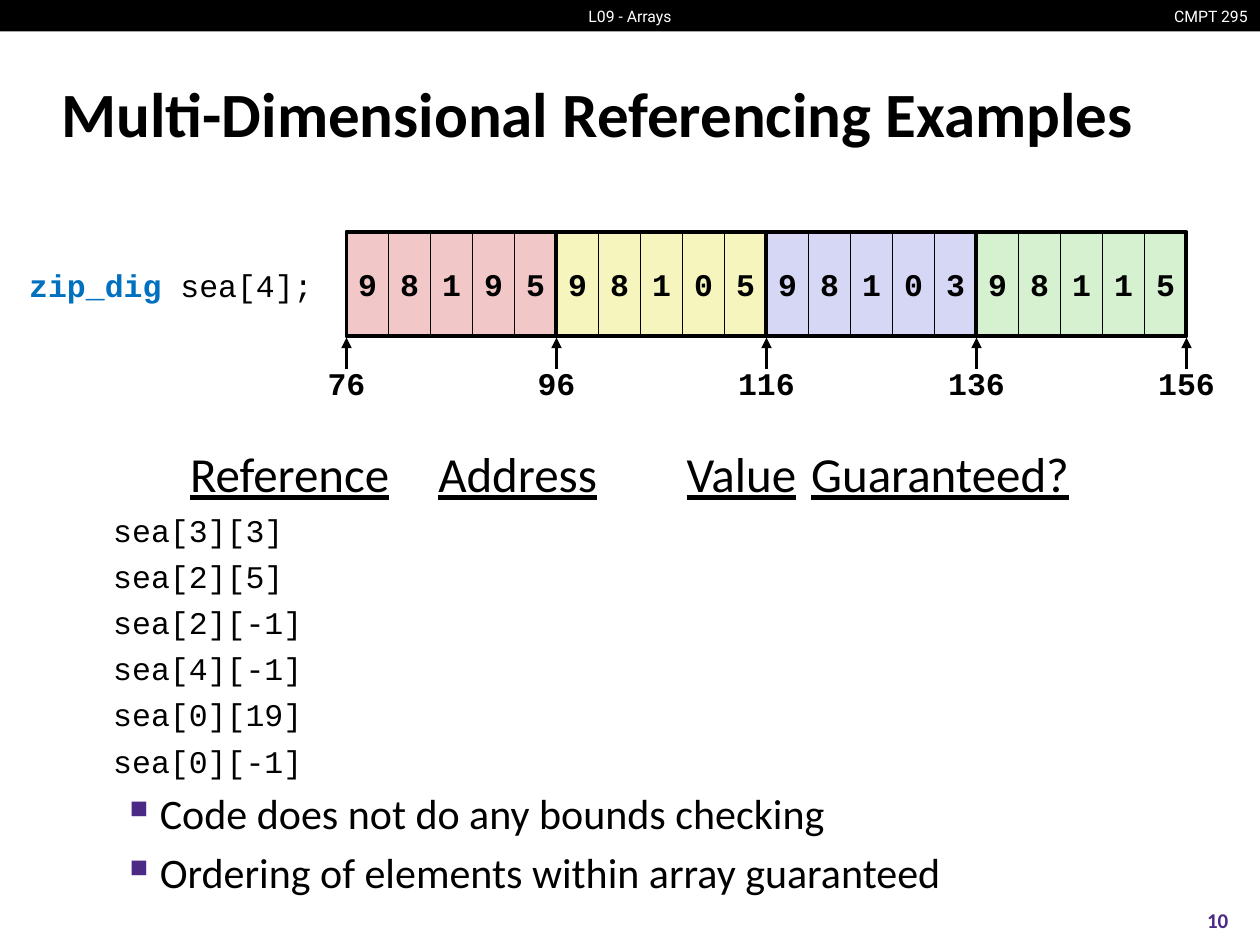
from lxml import etree
from pptx import Presentation
from pptx.dml.color import RGBColor
from pptx.enum.shapes import MSO_CONNECTOR, MSO_SHAPE
from pptx.enum.text import MSO_ANCHOR as Anchor, PP_ALIGN as Align
from pptx.oxml.ns import qn
from pptx.util import Inches, Pt

BLACK = RGBColor(0x00, 0x00, 0x00)
WHITE = RGBColor(0xFF, 0xFF, 0xFF)
PURPLE = RGBColor(0x4B, 0x2A, 0x85)
BLUE = RGBColor(0x00, 0x70, 0xC0)
PINK = RGBColor(0xF1, 0xC7, 0xC7)
YELLOW = RGBColor(0xF6, 0xF5, 0xBD)
LAVENDER = RGBColor(0xD6, 0xD6, 0xF5)
GREEN = RGBColor(0xD5, 0xF1, 0xCF)
CODE = "Courier New"


def write_text(paragraph, text, size=18, font=CODE, color=BLACK,
               bold=False, underline=False, align=Align.LEFT):
    paragraph.alignment = align
    run = paragraph.add_run()
    run.text = text
    run.font.size = Pt(size)
    run.font.name = font
    run.font.color.rgb = color
    run.font.bold = bold
    run.font.underline = underline


def add_box(shapes, left, top, width, height, fill=None, line=None,
            anchor=Anchor.MIDDLE, inset=0.1):
    """Add a rectangle, plain unless fill or line is given; return its first paragraph."""
    box = shapes.add_shape(MSO_SHAPE.RECTANGLE, Inches(left), Inches(top),
                           Inches(width), Inches(height))
    box.shadow.inherit = False
    if fill is None:
        box.fill.background()
    else:
        box.fill.solid()
        box.fill.fore_color.rgb = fill
    if line is None:
        box.line.fill.background()
    else:
        box.line.color.rgb = BLACK
        box.line.width = Pt(line)
    frame = box.text_frame
    frame.word_wrap = True
    frame.vertical_anchor = anchor
    frame.margin_left = frame.margin_right = Inches(inset)
    frame.margin_top = frame.margin_bottom = Inches(0.05)
    return frame.paragraphs[0]


presentation = Presentation()
presentation.slide_width = Inches(10)
presentation.slide_height = Inches(7.5)
slide = presentation.slides.add_slide(presentation.slide_layouts[6])
shapes = slide.shapes

# Header band, title and slide number
add_box(shapes, 0, 0, 10, 0.25, fill=BLACK)
write_text(add_box(shapes, 9, 0, 1, 0.25), "CMPT 295",
           size=9, font="Roboto", color=WHITE, align=Align.RIGHT)
write_text(add_box(shapes, 4.4, 0, 1.2, 0.25), "L09 - Arrays",
           size=9, font="Roboto", color=WHITE, align=Align.CENTER)
write_text(add_box(shapes, 0.39, 0.48, 9.19, 0.83),
           "Multi-Dimensional Referencing Examples",
           size=36, font="Calibri", bold=True)
write_text(add_box(shapes, 9.33, 7.1, 0.67, 0.4), "10",
           size=12, font="Calibri", color=PURPLE, bold=True, align=Align.CENTER)

# References and remarks
paragraph = add_box(shapes, 0.43, 3.47, 9.15, 3.6, anchor=Anchor.TOP)
body = paragraph._parent
for heading in ("Reference", "Address", "Value", "Guaranteed?"):
    write_text(paragraph, "\t", size=28, font="Calibri")
    write_text(paragraph, heading, size=28, font="Calibri", underline=True)
tabs = etree.SubElement(paragraph._p.get_or_add_pPr(), qn("a:tabLst"))
for position in (0.98, 2.95, 4.92, 5.91):
    etree.SubElement(tabs, qn("a:tab"), pos=str(Inches(position)), algn="l")

for index in ("[3][3]", "[2][5]", "[2][-1]", "[4][-1]", "[0][19]", "[0][-1]"):
    paragraph = body.add_paragraph()
    paragraph.space_before = Pt(4.8)
    paragraph._p.get_or_add_pPr().set("marL", str(Inches(0.37)))
    write_text(paragraph, "sea" + index)

for remark in ("Code does not do any bounds checking",
               "Ordering of elements within array guaranteed"):
    paragraph = body.add_paragraph()
    paragraph.space_before = Pt(4.8)
    write_text(paragraph, remark, size=24, font="Calibri")
    properties = paragraph._p.get_or_add_pPr()
    properties.set("marL", str(Inches(0.74)))
    properties.set("indent", str(Inches(-0.24)))
    bullet_color = etree.SubElement(properties, qn("a:buClr"))
    etree.SubElement(bullet_color, qn("a:srgbClr"), val=str(PURPLE))
    etree.SubElement(properties, qn("a:buSzPct"), val="60000")
    etree.SubElement(properties, qn("a:buChar"), char="■")

# Array declaration
declaration = add_box(shapes, 0.1, 2.06, 2.48, 0.4, anchor=Anchor.TOP)
write_text(declaration, "zip_dig ", color=BLUE, bold=True, align=Align.RIGHT)
write_text(declaration, "sea[4];", align=Align.RIGHT)

# Array rows laid end to end, with the address of each boundary
array_left, array_top, cell_width, cell_height = 2.75, 1.84, 1 / 3, 0.83
row_width = 5 * cell_width
rows = (("98195", PINK), ("98105", YELLOW), ("98103", LAVENDER), ("98115", GREEN))

for boundary in range(len(rows) + 1):
    x = array_left + boundary * row_width
    arrow = shapes.add_connector(MSO_CONNECTOR.STRAIGHT, Inches(x), Inches(2.93),
                                 Inches(x), Inches(2.68))
    arrow.line.color.rgb = BLACK
    arrow.line.width = Pt(2)
    etree.SubElement(arrow.line._get_or_add_ln(), qn("a:tailEnd"), type="triangle")
    etree.SubElement(arrow._element.spPr, qn("a:effectLst"))
    write_text(add_box(shapes, x - 0.33, 2.84, 0.66, 0.4, anchor=Anchor.TOP, inset=0),
               str(76 + 20 * boundary), bold=True, align=Align.CENTER)

for row, (digits, color) in enumerate(rows):
    group = shapes.add_group_shape()
    for column, digit in enumerate(digits):
        x = array_left + row * row_width + column * cell_width
        cell = add_box(group.shapes, x, array_top, cell_width, cell_height,
                       fill=color, line=1, inset=0)
        write_text(cell, digit, bold=True, align=Align.CENTER)

for row in range(len(rows)):
    add_box(shapes, array_left + row * row_width, array_top,
            row_width, cell_height, line=2.25)

presentation.save("out.pptx")
